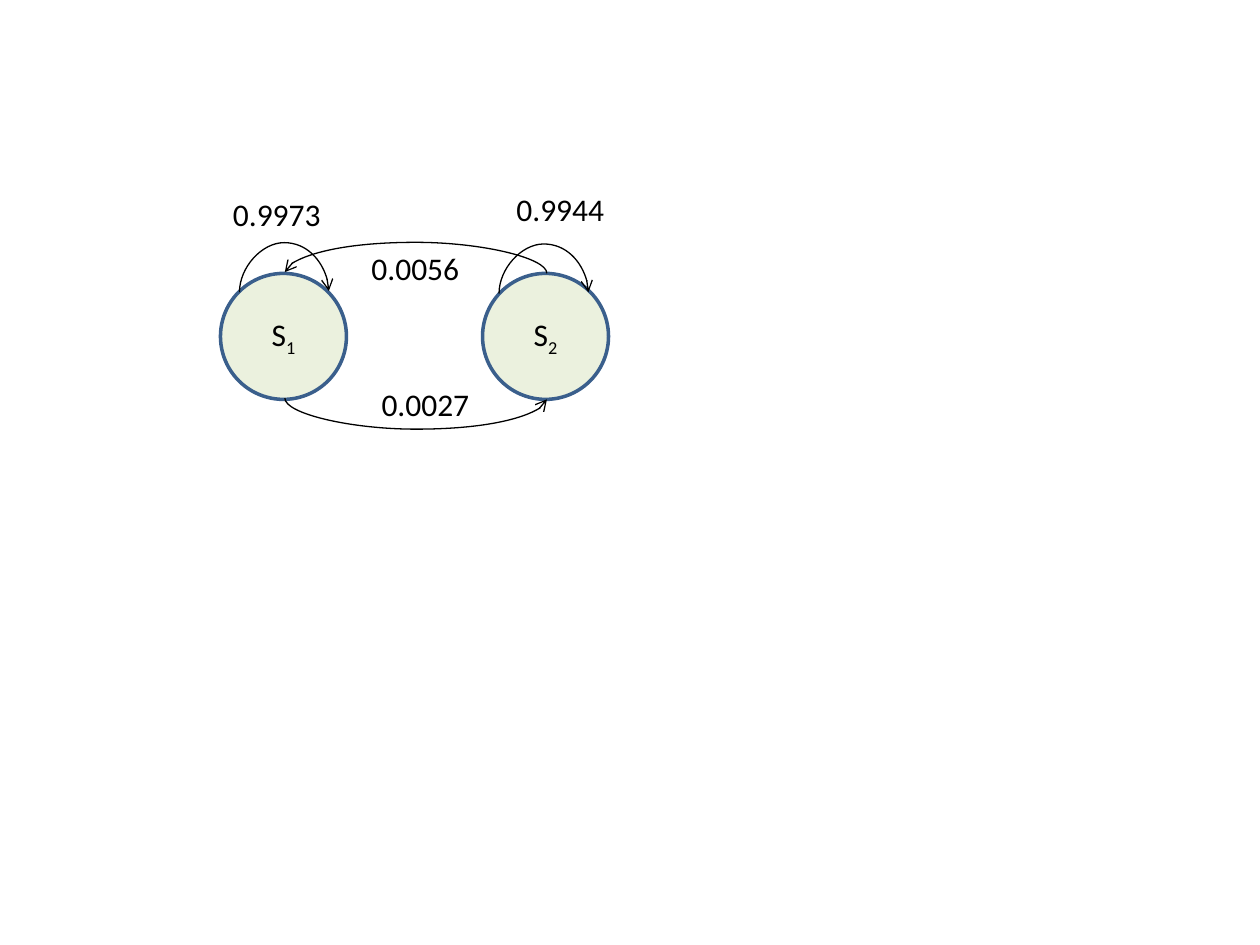
from lxml.etree import SubElement
from pptx import Presentation
from pptx.dml.color import RGBColor
from pptx.enum.shapes import MSO_CONNECTOR, MSO_SHAPE
from pptx.enum.text import MSO_ANCHOR, MSO_AUTO_SIZE, PP_ALIGN
from pptx.oxml.ns import qn
from pptx.util import Inches, Pt

STATES = [("S", "1", 1.75), ("S", "2", 3.83)]
STATE_TOP, STATE_SIZE = 2.17, 1
LABELS = [
    ("0.9973", 1.75, 1.5),
    ("0.9944", 4, 1.46),
    ("0.0056", 2.85, 1.93),
    ("0.0027", 2.93, 3.01),
]
# start, end, bulge height, rotation
ARCS = [
    ((1.9, 2.32), (2.61, 2.31), 0.4, 90),
    ((3.96, 2.33), (4.67, 2.32), 0.4, 90),
    ((2.26, 3.16), (4.34, 3.17), 0.25, 270),
    ((4.34, 2.17), (2.26, 2.16), 0.25, 270),
]


def color(value):
    return RGBColor.from_string(value)


def set_font(p):
    p.font.name = "Calibri"
    p.font.size = Pt(18)
    p.font.color.rgb = color("000000")


def add_state(slide, name, index, left):
    sp = slide.shapes.add_shape(
        MSO_SHAPE.OVAL, Inches(left), Inches(STATE_TOP), Inches(STATE_SIZE), Inches(STATE_SIZE)
    )
    sp.shadow.inherit = False
    sp.fill.solid()
    sp.fill.fore_color.rgb = color("EBF1DE")
    sp.line.color.rgb = color("3A5F8C")
    sp.line.width = Pt(2)
    tf = sp.text_frame
    tf.vertical_anchor = MSO_ANCHOR.MIDDLE
    p = tf.paragraphs[0]
    p.alignment = PP_ALIGN.CENTER
    set_font(p)
    p.add_run().text = name
    r = p.add_run()
    r.text = index
    r.font._element.set("baseline", "-25000")


def add_arc(slide, start, end, bulge, rotation):
    (x1, y1), (x2, y2) = start, end
    cx, cy = (x1 + x2) / 2, (y1 + y2) / 2
    turn = 1 if rotation == 90 else -1
    dx, dy = turn * (y2 - y1) / 2, -turn * (x2 - x1) / 2
    line = slide.shapes.add_connector(
        MSO_CONNECTOR.CURVE, Inches(cx - dx), Inches(cy - dy), Inches(cx + dx), Inches(cy + dy)
    )
    line.line.color.rgb = color("000000")
    line.line.width = Pt(0.75)
    props = line._element.spPr
    props.find(qn("a:xfrm")).set("rot", str(rotation * 60000))
    guides = props.find(qn("a:prstGeom")).get_or_add_avLst()
    ratio = round(bulge / abs(y2 - y1) * 100000)
    SubElement(guides, qn("a:gd"), name="adj1", fmla=f"val {ratio}")
    SubElement(line.line._get_or_add_ln(), qn("a:tailEnd"), type="arrow")
    SubElement(props, qn("a:effectLst"))


def add_label(slide, text, left, top):
    tf = slide.shapes.add_textbox(Inches(left), Inches(top), Inches(0.9), Inches(0.4)).text_frame
    tf.word_wrap = False
    tf.auto_size = MSO_AUTO_SIZE.SHAPE_TO_FIT_TEXT
    p = tf.paragraphs[0]
    p.text = text
    set_font(p)


def main():
    prs = Presentation()
    prs.slide_width, prs.slide_height = Inches(10), Inches(7.5)
    slide = prs.slides.add_slide(prs.slide_layouts[6])
    for state in STATES:
        add_state(slide, *state)
    for arc in ARCS:
        add_arc(slide, *arc)
    for label in LABELS:
        add_label(slide, *label)
    prs.save("out.pptx")


if __name__ == "__main__":
    main()
